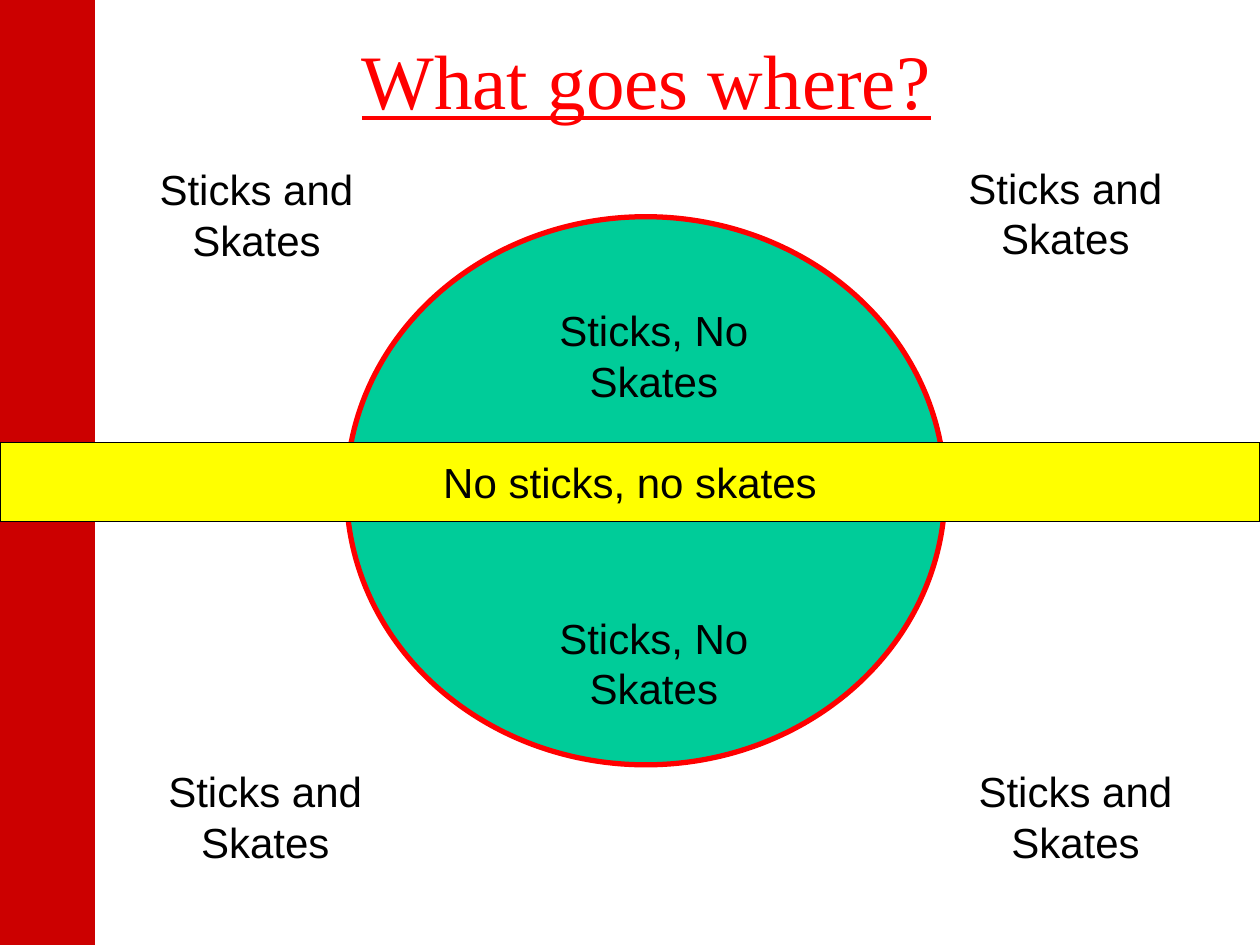
import pptx
import pptx.util
import pptx.dml.color
import pptx.enum.shapes
import pptx.enum.text

Pt = pptx.util.Pt
KIND = pptx.enum.shapes.MSO_SHAPE
ANCHOR = pptx.enum.text.MSO_ANCHOR

TITLE = "What goes where?"
BAND = "No sticks, no skates"
INNER = "Sticks, No Skates"
OUTER = "Sticks and Skates"

# Lengths in points: left, top, width, height
SIDE = (0, 0, 54, 540)
HEAD = (45.36, 0, 648, 90)
RING = (198, 123.84, 342, 313.2)
STRIP = (0, 252.72, 720, 45.36)
INNER_SIZE = (169.92, 28.8)
INNER_SPOTS = [(288.72, 170.64), (288.72, 346.32)]
OUTER_SIZE = (157.68, 27.36)
OUTER_SPOTS = [(67.68, 90), (535.68, 434.16), (529.92, 89.28), (72.72, 434.16)]


def color(code):
    return pptx.dml.color.RGBColor.from_string(code)


def place(box):
    return [Pt(n) for n in box]


def write(shape, text, anchor, size=24, font="Arial", ink="000000"):
    frame = shape.text_frame
    frame.word_wrap = True
    frame.auto_size = pptx.enum.text.MSO_AUTO_SIZE.NONE
    frame.vertical_anchor = anchor
    para = frame.paragraphs[0]
    para.text = text
    para.alignment = pptx.enum.text.PP_ALIGN.CENTER
    para.font.size = Pt(size)
    para.font.name = font
    para.font.color.rgb = color(ink)
    return para


def draw(kind, box, fill, line, width):
    shape = slide.shapes.add_shape(kind, *place(box))
    shape.shadow.inherit = False
    shape.fill.solid()
    shape.fill.fore_color.rgb = color(fill)
    shape.line.color.rgb = color(line)
    shape.line.width = Pt(width)
    return shape


def label(text, spots, size):
    for spot in spots:
        box = slide.shapes.add_textbox(*place(spot + size))
        write(box, text, ANCHOR.TOP)


deck = pptx.Presentation()
deck.slide_width, deck.slide_height = Pt(720), Pt(540)
slide = deck.slides.add_slide(deck.slide_layouts[5])

title = slide.shapes.title
title.left, title.top, title.width, title.height = place(HEAD)
write(title, TITLE, ANCHOR.MIDDLE, 44, "Times New Roman", "FF0000").font.underline = True

draw(KIND.RECTANGLE, SIDE, "CC0000", "CC0000", 0.75)
draw(KIND.OVAL, RING, "00CC99", "FF0000", 3)
label(INNER, INNER_SPOTS, INNER_SIZE)
strip = draw(KIND.RECTANGLE, STRIP, "FFFF00", "000000", 0.75)
write(strip, BAND, ANCHOR.MIDDLE)
label(OUTER, OUTER_SPOTS, OUTER_SIZE)

deck.save("out.pptx")
